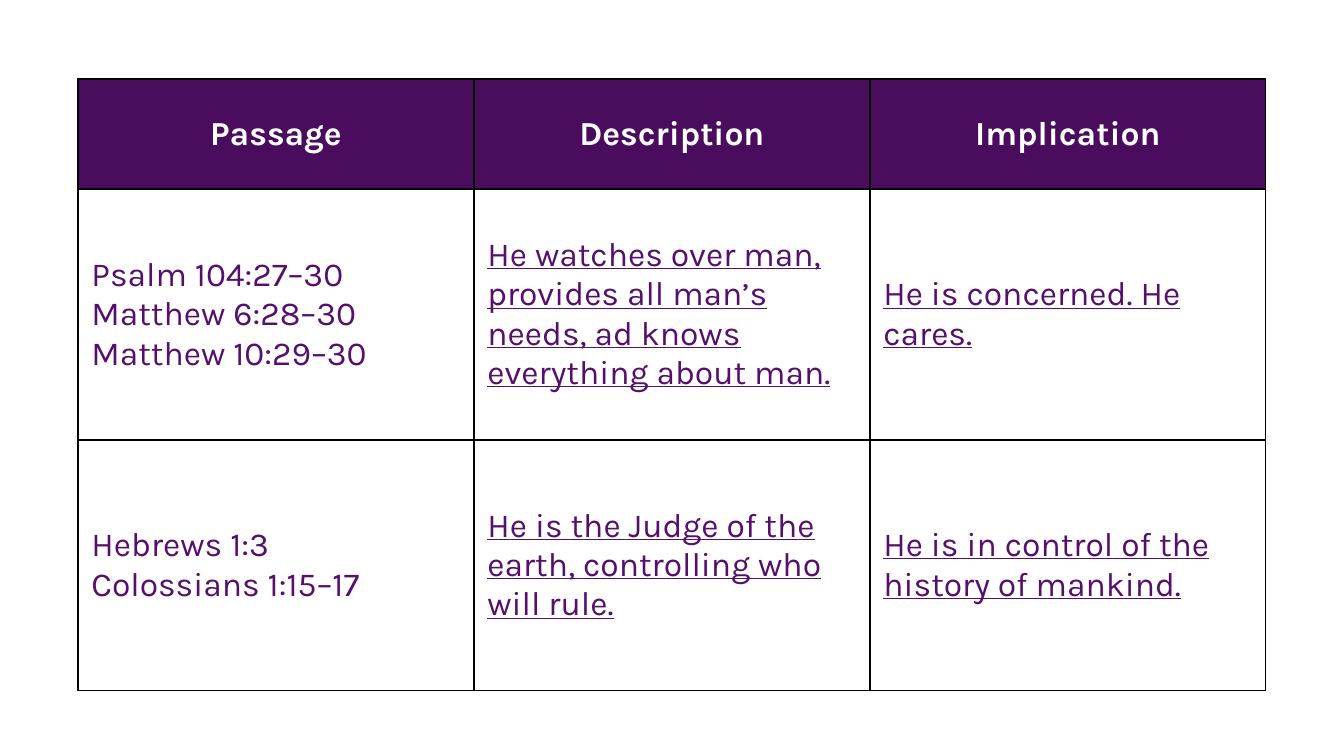
"""Build a slide with a table of passages, descriptions and implications."""
import dataclasses

import pptx
import pptx.dml.color
import pptx.enum.text
import pptx.oxml
import pptx.oxml.ns
import pptx.util

PX = 914400 / 134.4


@dataclasses.dataclass(frozen=True)
class Theme:
    """Colours, font and sizes of the slide."""

    header: str = "4A0D5E"
    ink: str = "56106C"
    paper: str = "FFFFFF"
    border: str = "000000"
    font: str = "Karla"
    size: int = 18
    line: float = 0.75


def px(n):
    """Turn pixels into EMU."""
    return pptx.util.Emu(round(n * PX))


def rgb(value):
    """Turn a hex string into a colour."""
    return pptx.dml.color.RGBColor.from_string(value)


def write(tf, text, *, font, size, color, bold=False, underline=False, align="LEFT"):
    """Write text into the first paragraph, one line break per newline."""
    p = tf.paragraphs[0]
    p.alignment = pptx.enum.text.PP_ALIGN[align]
    for i, line in enumerate(text.split("\n")):
        if i:
            p.add_line_break()
        r = p.add_run()
        r.text = line
        r.font.name = font
        r.font.size = pptx.util.Pt(size)
        r.font.bold = bold
        r.font.underline = underline
        r.font.color.rgb = rgb(color)


class Builder:
    """Hold the theme and the current slide."""

    def __init__(self, s, theme):
        """Keep the slide and its theme."""
        self.s = s
        self.theme = theme

    def border(self, cell):
        """Draw a solid line on each side of a cell."""
        t = self.theme
        tcPr = cell._tc.get_or_add_tcPr()
        for side in "LRTB":
            tcPr.append(pptx.oxml.parse_xml(
                f'<a:ln{side} {pptx.oxml.ns.nsdecls("a")} w="{pptx.util.Pt(t.line)}">'
                f'<a:solidFill><a:srgbClr val="{t.border}"/></a:solidFill></a:ln{side}>'))

    def cell(self, cell, text, *, header, underline):
        """Format and fill one table cell."""
        t = self.theme
        cell.vertical_anchor = pptx.enum.text.MSO_ANCHOR.MIDDLE
        self.border(cell)
        if header:
            cell.fill.solid()
            cell.fill.fore_color.rgb = rgb(t.header)
        else:
            cell.fill.background()
        write(cell.text_frame, text, font=t.font, size=t.size, bold=header,
              color=t.paper if header else t.ink, underline=underline,
              align="CENTER" if header else "LEFT")

    def table(self, rows, left, top, col_width, heights):
        """Add a table with a header row and underlined answer columns."""
        n = len(rows[0])
        table = self.s.shapes.add_table(
            len(rows), n, px(left), px(top), px(col_width * n), px(sum(heights))).table
        for col in table.columns:
            col.width = px(col_width)
        for i, (texts, height) in enumerate(zip(rows, heights)):
            table.rows[i].height = px(height)
            for j, text in enumerate(texts):
                self.cell(table.cell(i, j), text, header=i == 0,
                          underline=i > 0 and j > 0)


def main():
    """Build and save the slide."""
    prs = pptx.Presentation()
    prs.slide_width, prs.slide_height = px(1344), px(756)
    s = prs.slides.add_slide(prs.slide_layouts[6])
    rows = [
        ("Passage", "Description", "Implication"),
        ("Psalm 104:27–30\nMatthew 6:28–30\nMatthew 10:29–30",
         "He watches over man, provides all man’s needs, ad knows everything about man.",
         "He is concerned. He cares."),
        ("Hebrews 1:3\nColossians 1:15–17",
         "He is the Judge of the earth, controlling who will rule.",
         "He is in control of the history of mankind."),
    ]
    Builder(s, Theme()).table(rows, left=78, top=79, col_width=396, heights=(110, 251, 251))
    prs.save("out.pptx")


if __name__ == "__main__":
    main()
